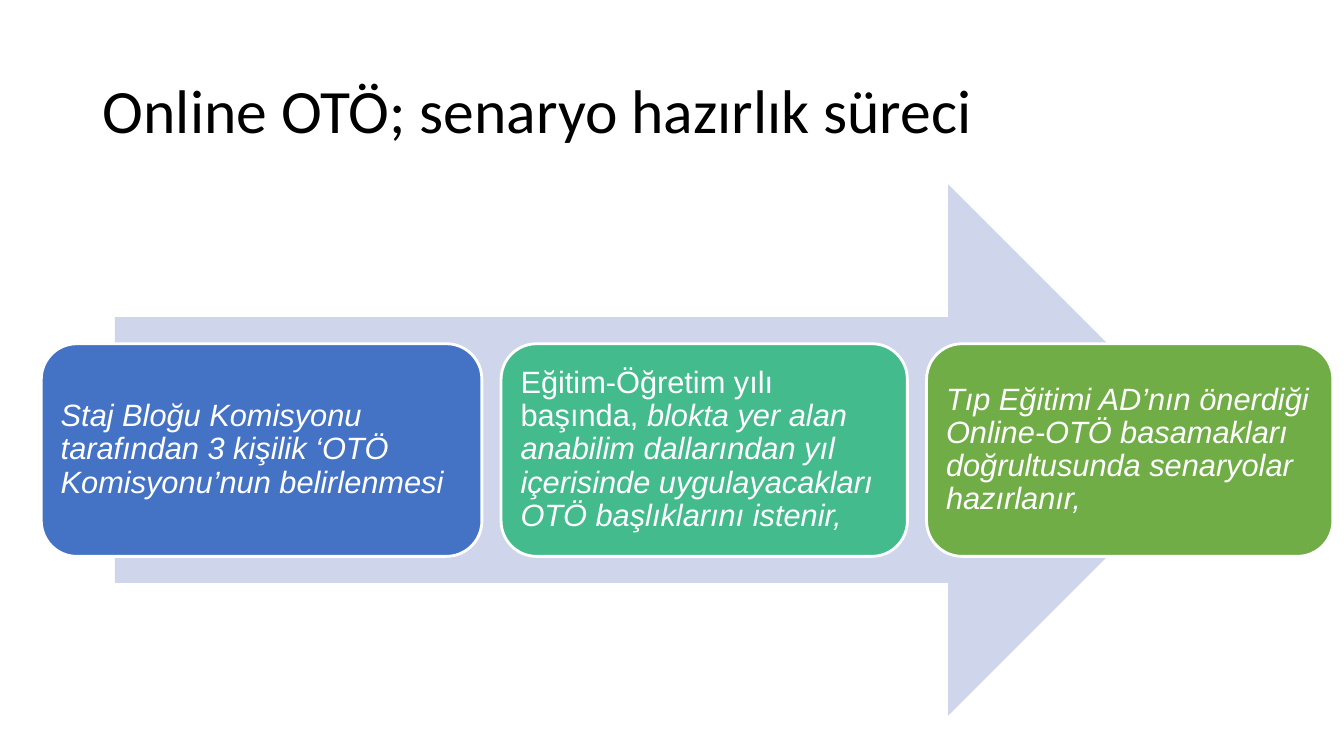
"""Build the slide on preparing online scenarios as a three-step arrow process."""
from pptx import Presentation
from pptx.dml.color import RGBColor
from pptx.enum.shapes import MSO_SHAPE as Shape
from pptx.enum.text import MSO_ANCHOR as Anchor, PP_ALIGN as Align
from pptx.util import Inches, Pt

COLORS = {
    "black": "000000", "white": "FFFFFF", "arrow": "CFD5EA",
    "blue": "4472C4", "teal": "43BB8D", "green": "70AD47",
}
TITLE = "Online OTÖ; senaryo hazırlık süreci"
STEPS = [
    ("blue", 4.37, [
        ("Staj Bloğu Komisyonu tarafından 3 kişilik ‘OTÖ Komisyonu’nun belirlenmesi", True)]),
    ("teal", 4.03, [
        ("Eğitim-Öğretim yılı başında, ", False),
        ("blokta yer alan anabilim dallarından yıl içerisinde uygulayacakları "
         "OTÖ başlıklarını istenir,", True)]),
    ("green", 4.03, [
        ("Tıp Eğitimi AD’nın önerdiği Online-OTÖ basamakları doğrultusunda "
         "senaryolar hazırlanır,", True)]),
]
TITLE_BOX = (0.92, 0.4, 11.5, 1.45)
ARROW_BOX = (1.14, 1.83, 10.9, 5.27)
STEP_LEFT, STEP_TOP, STEP_HEIGHT, STEP_GAP = 0.41, 3.41, 2.11, 0.19
STEP_INSET = 0.09


def color(name):
    return RGBColor.from_string(COLORS[name])


def set_values(target, values):
    for name, value in values.items():
        setattr(target, name, value)


def add_filled(slide, kind, box, fill):
    shape = slide.shapes.add_shape(kind, *map(Inches, box))
    shape.shadow.inherit = False
    shape.fill.solid()
    shape.fill.fore_color.rgb = color(fill)
    return shape


def write(shape, spans, font_color, inset_x, inset_y, **font_values):
    frame = shape.text_frame
    set_values(frame, {
        "word_wrap": True, "vertical_anchor": Anchor.MIDDLE,
        "margin_left": Inches(inset_x), "margin_right": Inches(inset_x),
        "margin_top": Inches(inset_y), "margin_bottom": Inches(inset_y),
    })
    para = frame.paragraphs[0]
    set_values(para, {"alignment": Align.LEFT, "line_spacing": 0.9})
    for text, italic in spans:
        span = para.add_run()
        span.text = text
        set_values(span.font, {"italic": italic, **font_values})
        span.font.color.rgb = color(font_color)


def main():
    deck = Presentation()
    set_values(deck, {"slide_width": Inches(13.33), "slide_height": Inches(7.5)})
    slide = deck.slides.add_slide(deck.slide_layouts[5])

    title = slide.shapes.title
    set_values(title, dict(zip(("left", "top", "width", "height"), map(Inches, TITLE_BOX))))
    write(title, [(TITLE, False)], "black", 0.1, 0.05, name="Calibri", size=Pt(44))

    arrow = add_filled(slide, Shape.RIGHT_ARROW, ARROW_BOX, "arrow")
    arrow.line.fill.background()

    left = STEP_LEFT
    for fill, width, spans in STEPS:
        step = add_filled(slide, Shape.ROUNDED_RECTANGLE,
                          (left, STEP_TOP, width, STEP_HEIGHT), fill)
        step.line.color.rgb = color("white")
        step.line.width = Pt(2)
        write(step, spans, "white", STEP_INSET, STEP_INSET, name="Arial", size=Pt(22))
        left += width + STEP_GAP

    deck.save("out.pptx")


if __name__ == "__main__":
    main()
